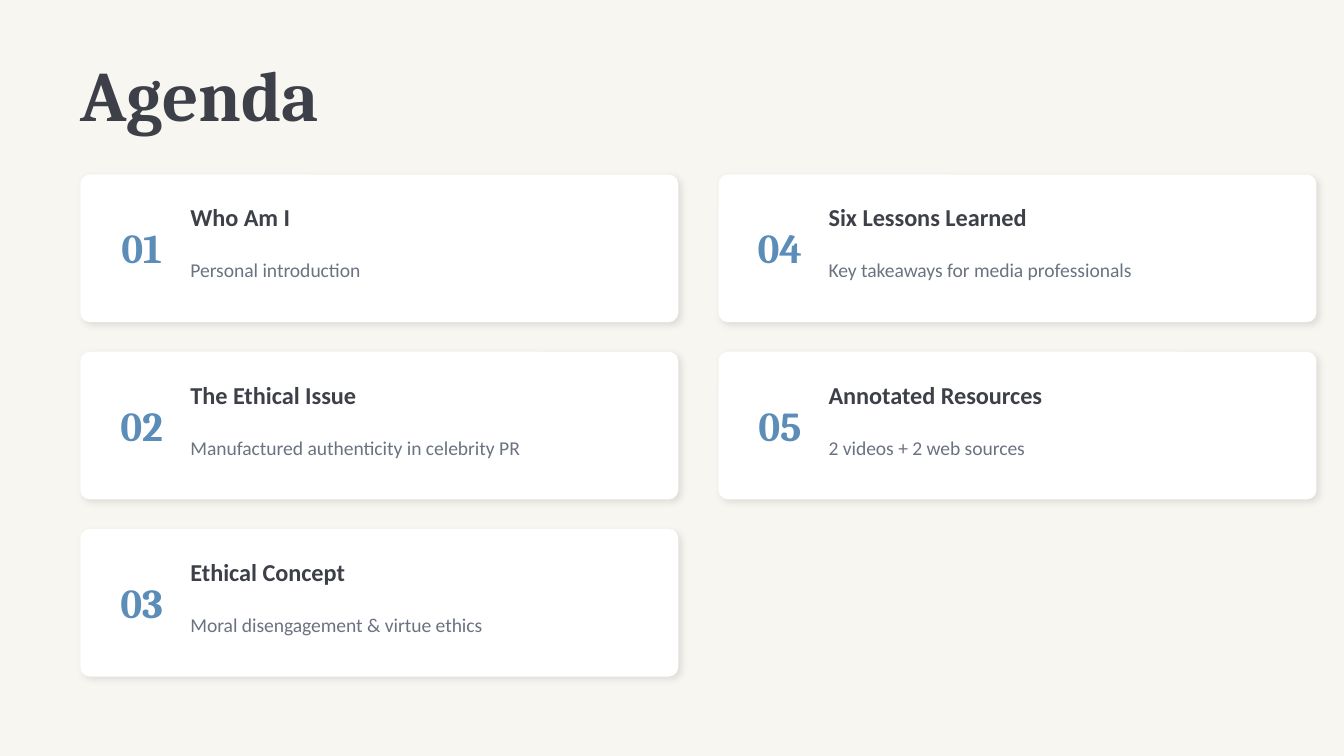
"""Build the agenda slide with a grid of numbered cards."""
from lxml import etree
from pptx import Presentation
from pptx import util as u
from pptx.dml.color import RGBColor
from pptx.enum import shapes, text
from pptx.oxml.ns import qn

INK, BLUE, GREY = "3D4048", "5B8DB8", "6B7280"
CREAM, WHITE = "F8F6F1", "FFFFFF"
LEFT, TOP = 1.52, 3.3
CARD_WIDTH, CARD_HEIGHT = 11.3, 2.79
COLUMN_STEP, ROW_STEP = 12.06, 3.35
ROWS = 3
TOPICS = [
    ("Who Am I", "Personal introduction"),
    ("The Ethical Issue", "Manufactured authenticity in celebrity PR"),
    ("Ethical Concept", "Moral disengagement & virtue ethics"),
    ("Six Lessons Learned", "Key takeaways for media professionals"),
    ("Annotated Resources", "2 videos + 2 web sources"),
]


def color(value):
    """Return the colour for a hex string."""
    return RGBColor.from_string(value)


def place(shape, left, top, width, height):
    """Move and size a shape in centimetres."""
    shape.left, shape.top = u.Cm(left), u.Cm(top)
    shape.width, shape.height = u.Cm(width), u.Cm(height)


def write(shape, words, size, font, ink, bold=True, align=text.PP_ALIGN.LEFT):
    """Fill a shape with one formatted, vertically centred line."""
    frame = shape.text_frame
    frame.text = words
    frame.word_wrap = True
    frame.auto_size = text.MSO_AUTO_SIZE.NONE
    frame.vertical_anchor = text.MSO_ANCHOR.MIDDLE
    frame.margin_left = frame.margin_right = 0
    frame.margin_top = frame.margin_bottom = 0
    paragraph = frame.paragraphs[0]
    paragraph.alignment = align
    run_font = paragraph.runs[0].font
    run_font.name, run_font.size, run_font.bold = font, u.Pt(size), bold
    run_font.color.rgb = color(ink)


def add_label(slide, box, *style, **options):
    """Add a text box at the given place."""
    write(slide.shapes.add_textbox(*map(u.Cm, box)), *style, **options)


def add_shadow(shape):
    """Give a shape a soft shadow to the lower right."""
    shape.shadow.inherit = False
    effects = shape._element.spPr.find(qn("a:effectLst"))
    shadow = etree.SubElement(
        effects, qn("a:outerShdw"), blurRad=str(u.Pt(4)), dist=str(u.Pt(2)),
        dir="2700000", algn="bl", rotWithShape="0")
    black = etree.SubElement(shadow, qn("a:srgbClr"), val="000000")
    etree.SubElement(black, qn("a:alpha"), val="9000")


def add_card(slide, left, top, number, heading, detail):
    """Add a rounded card with its number, heading and detail."""
    card = slide.shapes.add_shape(
        shapes.MSO_SHAPE.ROUNDED_RECTANGLE,
        *map(u.Cm, (left, top, CARD_WIDTH, CARD_HEIGHT)))
    card.adjustments[0] = 0.064
    card.fill.solid()
    card.fill.fore_color.rgb = color(WHITE)
    card.line.fill.background()
    add_shadow(card)
    add_label(slide, (left + 0.46, top + 0.3, 1.4, 2.16), f"{number:02}",
              22, "Cambria", BLUE, align=text.PP_ALIGN.CENTER)
    add_label(slide, (left + 2.08, top + 0.36, 8.76, 0.89), heading,
              13, "Calibri", INK)
    add_label(slide, (left + 2.08, top + 1.32, 8.76, 0.97), detail,
              10.5, "Calibri", GREY, bold=False)


def main():
    """Build and save the presentation."""
    presentation = Presentation()
    presentation.slide_width = u.Cm(25.4)
    presentation.slide_height = u.Cm(14.29)
    slide = presentation.slides.add_slide(presentation.slide_layouts[5])
    slide.background.fill.solid()
    slide.background.fill.fore_color.rgb = color(CREAM)
    title = slide.shapes.title
    place(title, LEFT, 0.97, 21.59, 1.57)
    write(title, "Agenda", 38, "Cambria", INK)
    for index, (heading, detail) in enumerate(TOPICS):
        column, row = divmod(index, ROWS)
        add_card(slide, LEFT + column * COLUMN_STEP, TOP + row * ROW_STEP,
                 index + 1, heading, detail)
    presentation.save("out.pptx")


if __name__ == "__main__":
    main()
